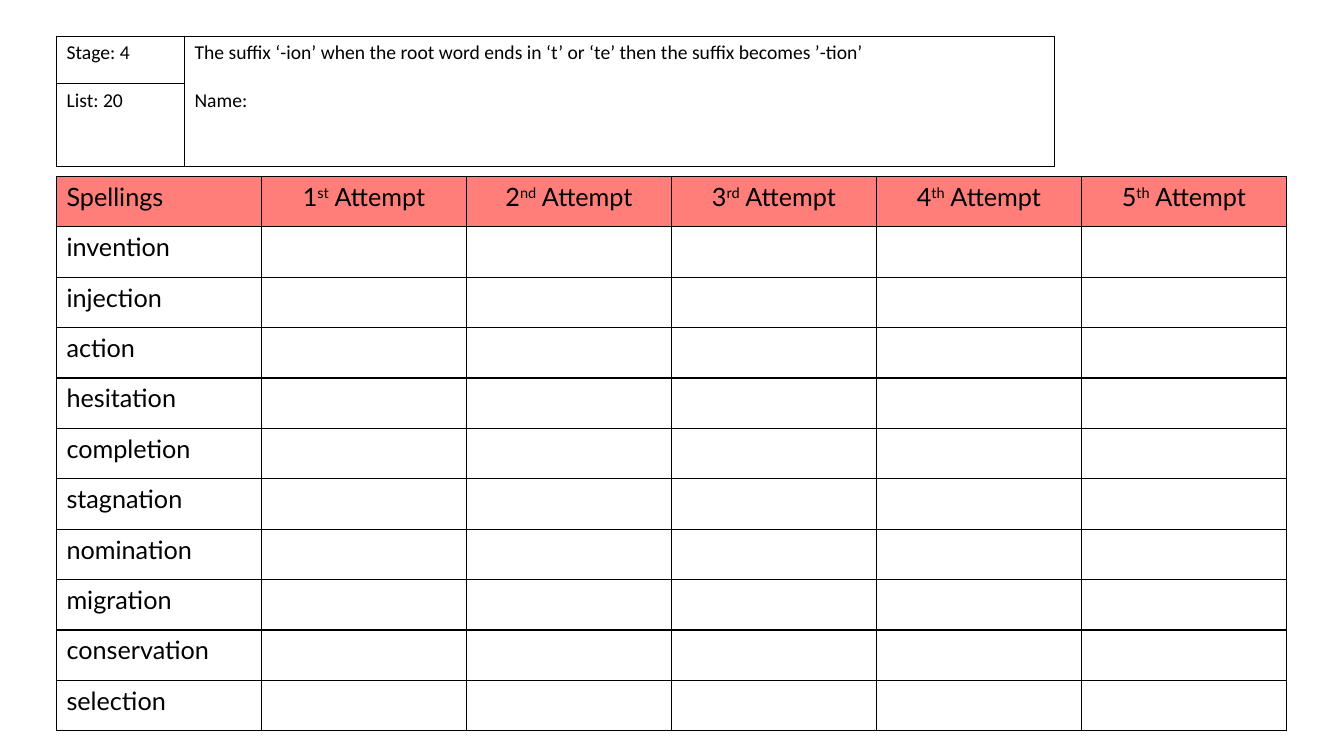
"""Build a spelling practice sheet with a heading table and an attempts table."""
from lxml.etree import SubElement
from pptx import Presentation
from pptx.dml.color import RGBColor
from pptx.enum.text import PP_ALIGN
from pptx.oxml.ns import qn
from pptx.util import Inches, Pt

STAGE = "Stage: 4"
LIST_NUMBER = "List: 20"
RULE = "The suffix ‘-ion’ when the root word ends in ‘t’ or ‘te’ then the suffix becomes ’-tion’"
NAME = "Name:"
SPELLINGS = ["invention", "injection", "action", "hesitation", "completion",
             "stagnation", "nomination", "migration", "conservation", "selection"]
ORDINALS = [("1", "st"), ("2", "nd"), ("3", "rd"), ("4", "th"), ("5", "th")]
BLACK, CORAL = "000000", "FF7E79"
LEFT = 0.56


def color(value):
    return RGBColor.from_string(value)


def write(paragraph, text, font="Lato", size=18, raised=False):
    run = paragraph.add_run()
    run.text = text
    run.font.name = font
    run.font.size = Pt(size)
    run.font.color.rgb = color(BLACK)
    if raised:
        run.font._element.set("baseline", "30000")


def format_cell(cell, fill):
    properties = cell._tc.get_or_add_tcPr()
    for side in ("lnL", "lnR", "lnT", "lnB"):
        line = SubElement(properties, qn(f"a:{side}"), w=str(Pt(1)))
        solid = SubElement(line, qn("a:solidFill"))
        SubElement(solid, qn("a:srgbClr"), val=BLACK)
    if fill:
        cell.fill.solid()
        cell.fill.fore_color.rgb = color(fill)
    else:
        cell.fill.background()


def add_grid(slide, top, widths, heights, header_fill=None):
    frame = slide.shapes.add_table(len(heights), len(widths), Inches(LEFT), Inches(top),
                                   Inches(sum(widths)), Inches(sum(heights)))
    table = frame.table
    table.first_row = table.horz_banding = False
    for column, width in zip(table.columns, widths):
        column.width = Inches(width)
    for index, (row, height) in enumerate(zip(table.rows, heights)):
        row.height = Inches(height)
        for cell in row.cells:
            format_cell(cell, header_fill if index == 0 else None)
    return table


def first_paragraph(table, row, column):
    return table.cell(row, column).text_frame.paragraphs[0]


def add_attempts(slide):
    columns, rows = len(ORDINALS) + 1, len(SPELLINGS) + 1
    table = add_grid(slide, 1.75, [12.2 / columns] * columns, [5.5 / rows] * rows, CORAL)
    for row, word in enumerate(["Spellings"] + SPELLINGS):
        write(first_paragraph(table, row, 0), word)
    for column, (number, suffix) in enumerate(ORDINALS, start=1):
        paragraph = first_paragraph(table, 0, column)
        paragraph.alignment = PP_ALIGN.CENTER
        write(paragraph, number)
        write(paragraph, suffix, raised=True)
        write(paragraph, " Attempt")


def add_heading(slide):
    table = add_grid(slide, 0.36, [1.27, 8.63], [0.47, 0.82])
    table.cell(0, 1).merge(table.cell(1, 1))
    name_paragraph = table.cell(0, 1).text_frame.add_paragraph()
    name_paragraph.space_before = Pt(17)
    entries = [(first_paragraph(table, 0, 0), STAGE), (first_paragraph(table, 1, 0), LIST_NUMBER),
               (first_paragraph(table, 0, 1), RULE), (name_paragraph, NAME)]
    for paragraph, text in entries:
        write(paragraph, text, font="Calibri", size=14)


def main():
    presentation = Presentation()
    presentation.slide_width = Inches(13.33)
    presentation.slide_height = Inches(7.5)
    slide = presentation.slides.add_slide(presentation.slide_layouts[6])
    add_attempts(slide)
    add_heading(slide)
    presentation.save("out.pptx")


if __name__ == "__main__":
    main()
